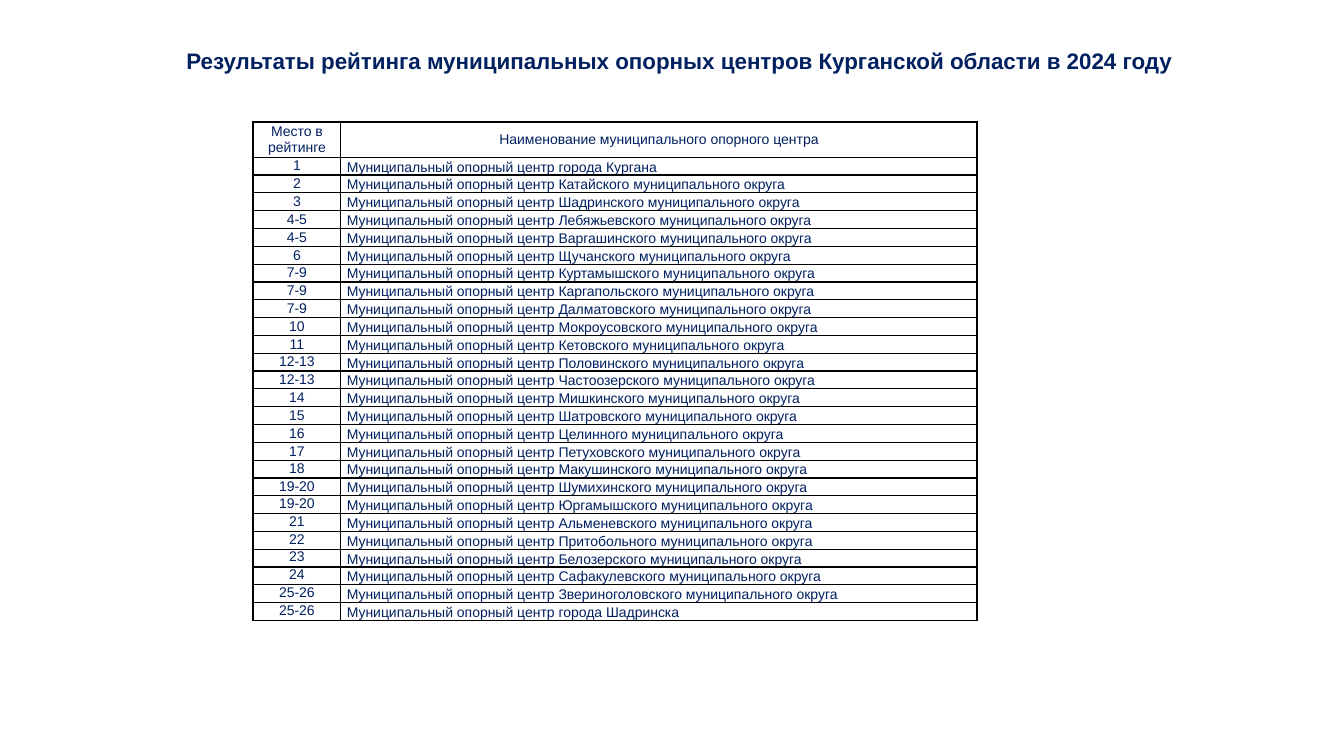
"""Builds the slide with the 2024 rating of municipal support centres."""
from pptx import Presentation
from pptx.dml.color import RGBColor
from pptx.enum.text import MSO_ANCHOR, PP_ALIGN
from pptx.oxml import parse_xml
from pptx.oxml.ns import nsdecls
from pptx.util import Inches, Pt

NAVY = RGBColor(0x00, 0x20, 0x60)
BLACK = RGBColor(0x00, 0x00, 0x00)

CENTRES = [
    ("1", "города Кургана"),
    ("2", "Катайского"),
    ("3", "Шадринского"),
    ("4-5", "Лебяжьевского"),
    ("4-5", "Варгашинского"),
    ("6", "Щучанского"),
    ("7-9", "Куртамышского"),
    ("7-9", "Каргапольского"),
    ("7-9", "Далматовского"),
    ("10", "Мокроусовского"),
    ("11", "Кетовского"),
    ("12-13", "Половинского"),
    ("12-13", "Частоозерского"),
    ("14", "Мишкинского"),
    ("15", "Шатровского"),
    ("16", "Целинного"),
    ("17", "Петуховского"),
    ("18", "Макушинского"),
    ("19-20", "Шумихинского"),
    ("19-20", "Юргамышского"),
    ("21", "Альменевского"),
    ("22", "Притобольного"),
    ("23", "Белозерского"),
    ("24", "Сафакулевского"),
    ("25-26", "Звериноголовского"),
    ("25-26", "города Шадринска"),
]
FIRST_TOP_ROW = 20


def set_font(p, size, bold):
    p.font.name = "Arial"
    p.font.size = Pt(size)
    p.font.bold = bold
    p.font.color.rgb = NAVY


def fill_cell(cell, text, align, anchor):
    cell.text = text
    cell.fill.background()
    cell.margin_left = cell.margin_right = Inches(0.06)
    cell.margin_top = cell.margin_bottom = 0
    cell.vertical_anchor = anchor
    p = cell.text_frame.paragraphs[0]
    p.alignment = align
    set_font(p, 10, False)
    tcPr = cell._tc.get_or_add_tcPr()
    for i, side in enumerate(("lnL", "lnR", "lnT", "lnB")):
        tcPr.insert(i, parse_xml(
            f'<a:{side} {nsdecls("a")} w="{Pt(1)}"><a:solidFill>'
            f'<a:srgbClr val="{BLACK}"/></a:solidFill></a:{side}>'))


prs = Presentation()
prs.slide_width, prs.slide_height = Inches(13.33), Inches(7.5)
s = prs.slides.add_slide(prs.slide_layouts[5])

title = s.shapes.title
title.left, title.top = Inches(0.84), Inches(0.41)
title.width, title.height = Inches(11.8), Inches(0.67)
tf = title.text_frame
tf.text = "Результаты рейтинга муниципальных опорных центров Курганской области в 2024 году"
tf.word_wrap = True
tf.vertical_anchor = MSO_ANCHOR.MIDDLE
tf.margin_bottom = Inches(0.33)
p = tf.paragraphs[0]
p.alignment = PP_ALIGN.CENTER
set_font(p, 16, True)

table = s.shapes.add_table(len(CENTRES) + 1, 2, Inches(2.51), Inches(1.21),
                           Inches(7.18), Inches(4.95)).table
table.first_row = table.horz_banding = False
table.columns[0].width = Inches(0.87)
table.columns[1].width = Inches(6.31)
for row in table.rows:
    row.height = Inches((4.95 - 0.35) / len(CENTRES))
table.rows[0].height = Inches(0.35)

for col, heading in enumerate(("Место в рейтинге", "Наименование муниципального опорного центра")):
    fill_cell(table.cell(0, col), heading, PP_ALIGN.CENTER, MSO_ANCHOR.MIDDLE)

for row, (place, name) in enumerate(CENTRES, 1):
    anchor = MSO_ANCHOR.MIDDLE if row < FIRST_TOP_ROW else MSO_ANCHOR.TOP
    fill_cell(table.cell(row, 0), place, PP_ALIGN.CENTER, anchor)
    suffix = "" if name.startswith("города") else " муниципального округа"
    fill_cell(table.cell(row, 1), f"Муниципальный опорный центр {name}{suffix}",
              PP_ALIGN.LEFT, MSO_ANCHOR.BOTTOM)

prs.save("out.pptx")
